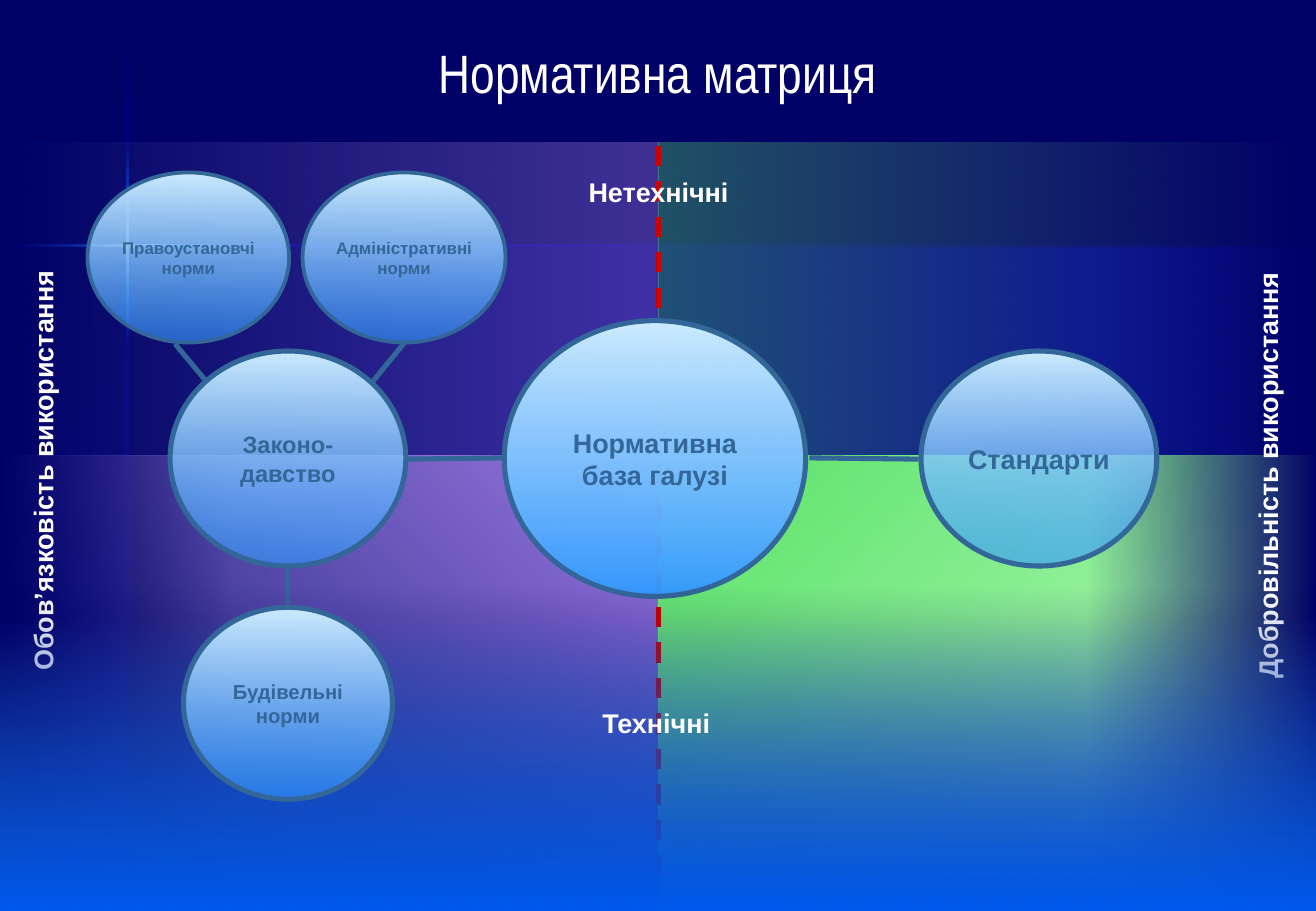
from dataclasses import dataclass
from typing import Optional

from lxml.etree import SubElement
from pptx import Presentation
from pptx.dml.color import RGBColor
from pptx.enum.dml import MSO_LINE
from pptx.enum.shapes import MSO_CONNECTOR, MSO_SHAPE
from pptx.enum.text import MSO_ANCHOR, PP_ALIGN
from pptx.oxml.ns import qn
from pptx.util import Inches, Pt

NIGHT = RGBColor(0x00, 0x00, 0x66)
NAVY = RGBColor(0x00, 0x00, 0x99)
BLUE = RGBColor(0x00, 0x66, 0xFF)
SKY = RGBColor(0x33, 0x99, 0xFF)
ICE = RGBColor(0xCC, 0xEC, 0xFF)
STEEL = RGBColor(0x33, 0x66, 0x99)
CREAM = RGBColor(0xFF, 0xFF, 0xCC)
VIOLET = RGBColor(0xCC, 0x99, 0xFF)
LILAC = RGBColor(0xCC, 0xCC, 0xFF)
GREEN = RGBColor(0x66, 0xFF, 0x66)
MINT = RGBColor(0x99, 0xFF, 0x99)
PALE_GREEN = RGBColor(0xCC, 0xFF, 0xCC)
RED = RGBColor(0xCC, 0x00, 0x00)
WHITE = RGBColor(0xFF, 0xFF, 0xFF)

W, H = 10.83, 7.5
MID_X, MID_Y, TOP = 5.42, 3.75, 1.17
CROSS_X, CROSS_Y, CROSS_LINE = 1.04, 2.01, 0.02


@dataclass
class Stop:
    color: RGBColor
    opacity: int = 100


@dataclass
class Panel:
    x: float
    y: float
    w: float
    h: float
    angle: int
    stops: list[Stop]


@dataclass
class Bubble:
    text: str
    x: float
    y: float
    w: float
    h: float
    size: int
    line: float = 3
    opacity: int = 61
    inset: float = 0.04


@dataclass
class Link:
    x1: float
    y1: float
    x2: float
    y2: float
    color: RGBColor = STEEL
    dash: Optional[MSO_LINE] = None


@dataclass
class Label:
    text: str
    x: float
    y: float
    w: float
    h: float
    rotation: int = 0
    size: int = 16
    font: str = "Arial"
    bold: bool = True


prs = Presentation()
prs.slide_width, prs.slide_height = Inches(W), Inches(H)
s = prs.slides.add_slide(prs.slide_layouts[6])
s.background.fill.solid()
s.background.fill.fore_color.rgb = NIGHT


def add_gradient_shape(kind: MSO_SHAPE, panel: Panel):
    sp = s.shapes.add_shape(kind, *map(Inches, (panel.x, panel.y, panel.w, panel.h)))
    sp.shadow.inherit = False
    sp.line.fill.background()
    sp.fill.gradient()
    grad = sp._element.spPr.find(qn("a:gradFill"))
    for child in list(grad):
        grad.remove(child)
    stops = SubElement(grad, qn("a:gsLst"))
    for i, stop in enumerate(panel.stops):
        gs = SubElement(stops, qn("a:gs"), pos=str(100000 * i // (len(panel.stops) - 1)))
        clr = SubElement(gs, qn("a:srgbClr"), val=str(stop.color))
        if stop.opacity < 100:
            SubElement(clr, qn("a:alpha"), val=str(stop.opacity * 1000))
    SubElement(grad, qn("a:lin"), ang=str(panel.angle * 60000), scaled="0")
    return sp


def write(tf, text: str, *, size: int, color: RGBColor, font: str = "Arial", bold: bool = True) -> None:
    tf.word_wrap = True
    tf.vertical_anchor = MSO_ANCHOR.MIDDLE
    p = tf.paragraphs[0]
    p.text = text
    p.alignment = PP_ALIGN.CENTER
    for r in p.runs:
        r.font.size, r.font.name, r.font.bold = Pt(size), font, bold
        r.font.color.rgb = color
    for br in p._p.findall(qn("a:br")):
        SubElement(br, qn("a:rPr"), sz=str(size * 100))


def add_panels(panels: list[Panel]) -> None:
    for panel in panels:
        add_gradient_shape(MSO_SHAPE.RECTANGLE, panel)


def add_bubble(b: Bubble) -> None:
    sp = add_gradient_shape(MSO_SHAPE.OVAL, Panel(b.x, b.y, b.w, b.h, 90, [Stop(ICE), Stop(SKY, b.opacity)]))
    sp.line.color.rgb = STEEL
    sp.line.width = Pt(b.line)
    tf = sp.text_frame
    tf.margin_left = tf.margin_right = 0
    tf.margin_top = tf.margin_bottom = Inches(b.inset)
    write(tf, b.text, size=b.size, color=STEEL)


def add_link(link: Link) -> None:
    c = s.shapes.add_connector(MSO_CONNECTOR.STRAIGHT, *map(Inches, (link.x1, link.y1, link.x2, link.y2)))
    c.line.color.rgb = link.color
    c.line.width = Pt(3)
    if link.dash:
        c.line.dash_style = link.dash
    SubElement(c._element.spPr, qn("a:effectLst"))


def add_label(label: Label) -> None:
    tb = s.shapes.add_textbox(*map(Inches, (label.x, label.y, label.w, label.h)))
    tb.rotation = label.rotation
    write(tb.text_frame, label.text, size=label.size, color=WHITE, font=label.font, bold=label.bold)


# Backdrop with a glowing cross
add_panels([
    Panel(1.05, 2.02, 9.78, 5.48, 0, [Stop(NIGHT), Stop(NAVY)]),
    Panel(0, 2.02, 1.05, 5.48, 90, [Stop(NIGHT), Stop(NAVY)]),
])
for start, end, *colors in [
    (0.01, 1.21, NIGHT, NAVY), (2.82, 7.5, NAVY, NIGHT), (2.38, 2.82, BLUE, NAVY),
    (1.21, 1.65, NAVY, BLUE), (1.65, 2.38, BLUE, CREAM, BLUE),
]:
    add_panels([Panel(CROSS_X, start, CROSS_LINE, end - start, 90, [Stop(c) for c in colors])])
for start, end, *colors in [
    (1.92, W, NAVY, NIGHT), (0, 0.66, NAVY, BLUE), (1.44, 1.92, BLUE, NAVY),
    (0.65, 1.44, BLUE, CREAM, BLUE),
]:
    add_panels([Panel(start, CROSS_Y, end - start, CROSS_LINE, 0, [Stop(c) for c in colors])])

# Quadrants and side fades
add_panels([
    Panel(0, MID_Y, MID_X, MID_Y, 135, [Stop(VIOLET, 77), Stop(LILAC, 0)]),
    Panel(MID_X, MID_Y, MID_X, MID_Y, 45, [Stop(GREEN, 89), Stop(PALE_GREEN)]),
    Panel(0, 0, 1.9, H, 0, [Stop(NIGHT), Stop(NIGHT, 0)]),
    Panel(8.94, 0, 1.9, H, 180, [Stop(NIGHT), Stop(NIGHT, 0)]),
    Panel(0, TOP, MID_X, MID_Y - TOP, 0, [Stop(LILAC, 0), Stop(VIOLET, 32)]),
    Panel(MID_X, TOP, MID_X, MID_Y - TOP, 0, [Stop(GREEN, 32), Stop(MINT, 0)]),
])

# Title
add_label(Label("Нормативна матриця", 0, 0.17, W, 0.84, size=32, font="Arial Narrow", bold=False))

# Norms, links and axes
add_link(Link(4.13, 3.77, 3.36, 3.78))
add_link(Link(7.56, 3.78, 6.66, 3.77))
add_bubble(Bubble("Адміністративні норми", 2.49, 1.42, 1.67, 1.4, 10, line=2.25))
add_bubble(Bubble("Законо-\vдавство", 1.4, 2.89, 1.94, 1.77, 14))
add_label(Label("Обов’язковість використання", -2.15, 3.65, 5, 0.45, rotation=270))
add_bubble(Bubble("Правоустановчі норми", 0.72, 1.42, 1.66, 1.4, 10, line=2.25))
add_link(Link(1.69, 3.13, 1.44, 2.83))
add_link(Link(3.06, 3.15, 3.33, 2.82))
add_link(Link(2.37, 4.98, 2.37, 4.68))
add_bubble(Bubble("Стандарти", 7.58, 2.89, 1.94, 1.77, 16))
add_label(Label("Добровільність використання", 7.93, 3.69, 5, 0.45, rotation=270))
add_link(Link(MID_X, H, MID_X, TOP, RED, MSO_LINE.DASH))
add_bubble(Bubble("Нормативна база галузі", 4.15, 2.64, 2.48, 2.27, 16, opacity=96))
add_label(Label("Нетехнічні", 3.66, 1.37, 3.52, 0.42))

# Bottom fade with the items above it
add_panels([
    Panel(0, 4.83, W, 2.67, 270, [Stop(NIGHT), Stop(NIGHT, 0)]),
    Panel(0, 5.08, W, 2.42, 90, [Stop(SKY, 0), Stop(BLUE, 89)]),
])
add_bubble(Bubble("Будівельні норми", 1.51, 5, 1.72, 1.58, 12, inset=0))
add_label(Label("Технічні", 3.64, 5.74, 3.52, 0.42))

prs.save("out.pptx")
